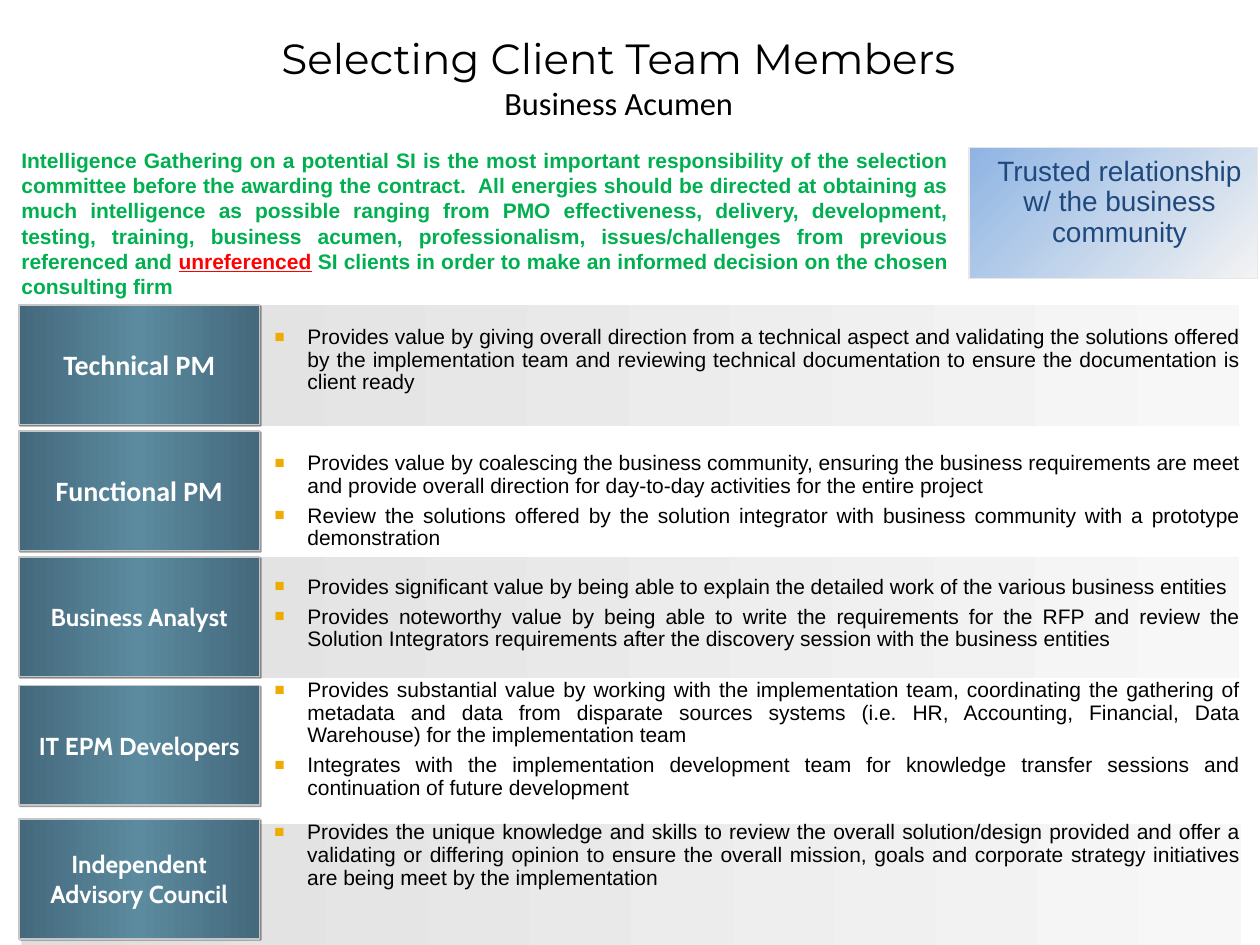
"""Build the slide on selecting client team members by business acumen."""
from dataclasses import dataclass

from lxml import etree
from pptx import Presentation
from pptx.dml.color import RGBColor
from pptx.enum import shapes, text
from pptx.oxml import ns
from pptx.util import Inches, Pt

BLACK = RGBColor(0x00, 0x00, 0x00)
WHITE = RGBColor(0xFF, 0xFF, 0xFF)
GREEN = RGBColor(0x00, 0xB0, 0x50)
RED = RGBColor(0xFF, 0x00, 0x00)
NAVY = RGBColor(0x1F, 0x49, 0x7D)
AMBER = RGBColor(0xF0, 0xAB, 0x00)
SILVER = RGBColor(0xC6, 0xC6, 0xC6)
PALE = RGBColor(0xE8, 0xE8, 0xE8)
SKY = RGBColor(0x8E, 0xB4, 0xE3)
MIST = RGBColor(0xF3, 0xF3, 0xF3)
BAR_DARK = RGBColor(0xDE, 0xDE, 0xDE)
BAR_LIGHT = RGBColor(0xF7, 0xF7, 0xF7)
TEAL = RGBColor(0x44, 0x69, 0x7D)
TEAL_LIGHT = RGBColor(0x5C, 0x8A, 0x9E)

RECT = shapes.MSO_SHAPE.RECTANGLE
ROUNDED = shapes.MSO_SHAPE.ROUNDED_RECTANGLE
LEFT_EDGE = 0.15
LIST_HEIGHT = 1.0


@dataclass
class Role:
    name: str
    top: float
    list_middle: float
    points: list[str]
    font: str = "Cabin"
    size: int = 14
    bar: tuple[float, float] | None = None


ROLES = [
    Role("Technical PM", 2.42, 2.86, [
        "Provides value by giving overall direction from a technical aspect and validating the solutions "
        "offered by the implementation team and reviewing technical documentation to ensure the "
        "documentation is client ready",
    ], "Calibri", 16, (0.15, 2.42)),
    Role("Functional PM", 3.42, 3.98, [
        "Provides value by coalescing the business community, ensuring the business requirements are meet "
        "and provide overall direction for day-to-day activities for the entire project",
        "Review the solutions offered by the solution integrator with business community with a prototype "
        "demonstration",
    ], "Calibri", 16),
    Role("Business Analyst", 4.42, 4.87, [
        "Provides significant value by being able to explain the detailed work of the various business entities",
        "Provides noteworthy value by being able to write the requirements for the RFP and review the "
        "Solution Integrators requirements after the discovery session with the business entities",
    ], bar=(0.15, 4.42)),
    Role("IT EPM Developers", 5.44, 5.87, [
        "Provides substantial value by working with the implementation team, coordinating the gathering of "
        "metadata and data from disparate sources systems (i.e. HR, Accounting, Financial, Data Warehouse) "
        "for the implementation team",
        "Integrates with the implementation development team for knowledge transfer sessions and "
        "continuation of future development",
    ]),
    Role("Independent Advisory Council", 6.5, 6.79, [
        "Provides the unique knowledge and skills to review the overall solution/design provided and offer a "
        "validating or differing opinion to ensure the overall mission, goals and corporate strategy "
        "initiatives are being meet by the implementation",
    ], bar=(0.17, 6.54)),
]


def add_run(p, words: str, font: str, size: float, color: RGBColor, bold: bool = False):
    r = p.add_run()
    r.text = words
    r.font.name, r.font.size, r.font.bold = font, Pt(size), bold
    r.font.color.rgb = color
    return r


def place(sp, left: float, top: float, width: float, height: float) -> None:
    sp.left, sp.top, sp.width, sp.height = map(Inches, (left, top, width, height))


def set_frame(tf, anchor, left: float, top: float, right: float, bottom: float) -> None:
    tf.word_wrap = True
    tf.auto_size = text.MSO_AUTO_SIZE.NONE
    tf.vertical_anchor = anchor
    tf.margin_left, tf.margin_top = Inches(left), Inches(top)
    tf.margin_right, tf.margin_bottom = Inches(right), Inches(bottom)


def add_panel(s, kind, box: tuple, colors: list[RGBColor], angle: int = 0, line: RGBColor | None = None):
    sp = s.shapes.add_shape(kind, *map(Inches, box))
    sp.shadow.inherit = False
    if kind == ROUNDED:
        sp.adjustments[0] = 0
    sp.fill.gradient()
    sp.fill.gradient_angle = angle
    stops = sp._element.spPr.find(".//" + ns.qn("a:gsLst"))
    for stop in list(stops):
        stops.remove(stop)
    for i, color in enumerate(colors):
        stop = etree.SubElement(stops, ns.qn("a:gs"), pos=str(100000 * i // (len(colors) - 1)))
        etree.SubElement(stop, ns.qn("a:srgbClr"), val=str(color))
    if line is None:
        sp.line.fill.background()
    else:
        sp.line.color.rgb = line
        sp.line.width = Pt(1)
    return sp


def add_label(s, role: Role) -> None:
    sp = add_panel(s, RECT, (LEFT_EDGE, role.top, 1.91, 0.95), [TEAL, TEAL_LIGHT, TEAL], line=SILVER)
    effects = sp._element.spPr.find(ns.qn("a:effectLst"))
    shadow = etree.SubElement(effects, ns.qn("a:outerShdw"), blurRad="0", dist=str(Pt(1)), dir="2700000")
    color = etree.SubElement(shadow, ns.qn("a:srgbClr"), val=str(BLACK))
    etree.SubElement(color, ns.qn("a:alpha"), val="40000")
    set_frame(sp.text_frame, text.MSO_ANCHOR.MIDDLE, 0.1, 0.1, 0.1, 0.1)
    p = sp.text_frame.paragraphs[0]
    p.alignment = text.PP_ALIGN.CENTER
    add_run(p, role.name, role.font, role.size, WHITE, True)


def set_bullet(p) -> None:
    pPr = p._p.get_or_add_pPr()
    pPr.set("marL", str(Inches(0.26)))
    pPr.set("indent", str(-Inches(0.26)))
    color = etree.SubElement(pPr, ns.qn("a:buClr"))
    etree.SubElement(color, ns.qn("a:srgbClr"), val=str(AMBER))
    etree.SubElement(pPr, ns.qn("a:buSzPct"), val="80000")
    etree.SubElement(pPr, ns.qn("a:buFont"), typeface="Arial")
    etree.SubElement(pPr, ns.qn("a:buChar"), char="■")


def fill_list(sp, role: Role) -> None:
    place(sp, 2.08, role.list_middle - LIST_HEIGHT / 2, 7.87, LIST_HEIGHT)
    tf = sp.text_frame
    set_frame(tf, text.MSO_ANCHOR.MIDDLE, 0.1, 0, 0.1, 0)
    for i, point in enumerate(role.points):
        p = tf.add_paragraph() if i else tf.paragraphs[0]
        p.alignment = text.PP_ALIGN.JUSTIFY
        p.line_spacing = 0.9
        p.space_before = Pt(4.2 if i else 0)
        set_bullet(p)
        add_run(p, point, "Arial", 12, BLACK)


def add_intro(s) -> None:
    sp = s.shapes.add_textbox(*map(Inches, (0.17, 1.17, 7.36, 1.22)))
    set_frame(sp.text_frame, text.MSO_ANCHOR.TOP, 0, 0, 0, 0)
    p = sp.text_frame.paragraphs[0]
    p.alignment = text.PP_ALIGN.JUSTIFY
    add_run(p, "Intelligence Gathering on a potential SI is the most important responsibility of the selection "
            "committee before the awarding the contract.  All energies should be directed at obtaining as much "
            "intelligence as possible ranging from PMO effectiveness, delivery, development, testing, training, "
            "business acumen, professionalism, issues/challenges from previous referenced and ",
            "Arial", 12, GREEN, True)
    add_run(p, "unreferenced", "Arial", 12, RED, True).font.underline = True
    add_run(p, " SI clients in order to make an informed decision on the chosen consulting firm",
            "Arial", 12, GREEN, True)


def add_callout(s) -> None:
    sp = add_panel(s, ROUNDED, (7.69, 1.17, 2.29, 1.04), [SKY, MIST], 315, PALE)
    set_frame(sp.text_frame, text.MSO_ANCHOR.TOP, 0.15, 0.08, 0.05, 0.05)
    p = sp.text_frame.paragraphs[0]
    p.alignment = text.PP_ALIGN.CENTER
    p.line_spacing = 0.9
    add_run(p, "Trusted relationship w/ the business community", "Arial", 16, NAVY)


def fill_title(sp) -> None:
    place(sp, 0.99, 0.22, 7.84, 0.78)
    set_frame(sp.text_frame, text.MSO_ANCHOR.MIDDLE, 0.1, 0.05, 0.1, 0.05)
    p = sp.text_frame.paragraphs[0]
    p.alignment = text.PP_ALIGN.CENTER
    add_run(p, "Selecting Client Team Members", "Montserrat", 24.1, BLACK)
    p.add_line_break()
    add_run(p, "Business Acumen", "Calibri", 18.5, BLACK)


def main() -> None:
    prs = Presentation()
    prs.slide_width, prs.slide_height = Inches(10), Inches(7.5)
    s = prs.slides.add_slide(prs.slide_layouts.get_by_name("Comparison"))
    title, *bodies = s.placeholders
    fill_title(title)
    add_intro(s)
    add_callout(s)
    for role in ROLES:
        if role.bar:
            add_panel(s, ROUNDED, (*role.bar, 9.68, 0.96), [BAR_DARK, BAR_LIGHT])
        add_label(s, role)
        sp = bodies.pop(0) if bodies else s.shapes.add_textbox(0, 0, 0, 0)
        s.shapes._spTree.append(sp._element)
        fill_list(sp, role)
    prs.save("out.pptx")


if __name__ == "__main__":
    main()
